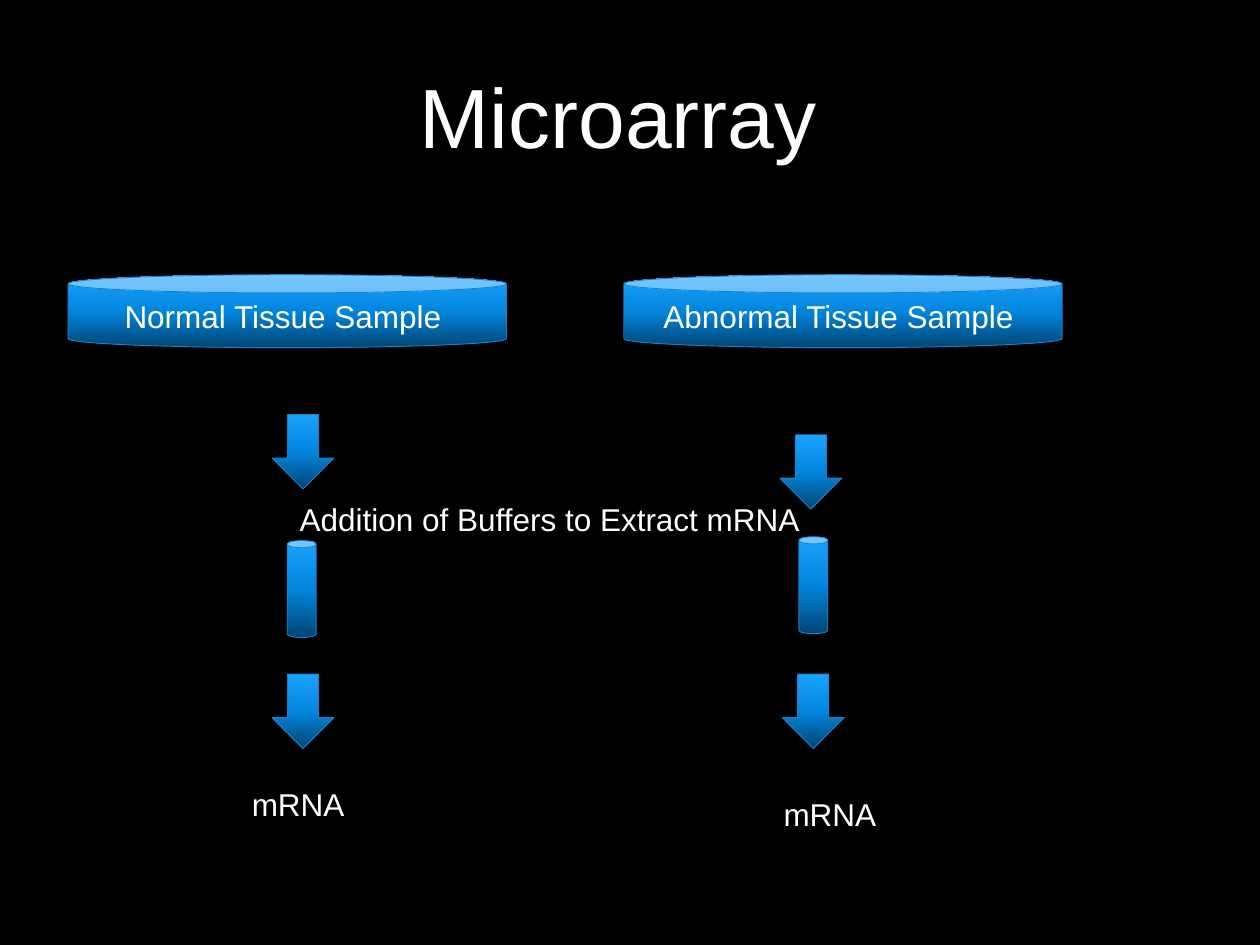
from copy import deepcopy

from pptx import Presentation
from pptx import util as u
from pptx.dml import color
from pptx.enum import shapes, text

CAN = shapes.MSO_SHAPE.CAN
ARROW = shapes.MSO_SHAPE.DOWN_ARROW


def rgb(value):
    return color.RGBColor.from_string(value)


class Diagram:
    font = "Arial"
    ink = "FFFFFF"
    background = "000000"
    edge = "1884CD"
    stops = [(0, "014573"), (0.5, "0285DD"), (1, "1AA3FF")]

    def __init__(self, prs):
        self.s = prs.slides.add_slide(prs.slide_layouts[5])
        fill = self.s.background.fill
        fill.solid()
        fill.fore_color.rgb = rgb(self.background)

    def add_words(self, sp, words, size, align, **frame):
        tf = sp.text_frame
        for name, value in frame.items():
            setattr(tf, name, value)
        p = tf.paragraphs[0]
        p.alignment = align
        r = p.add_run()
        r.text = words
        for name, value in {"name": self.font, "size": u.Pt(size)}.items():
            setattr(r.font, name, value)
        r.font.color.rgb = rgb(self.ink)

    def title(self, words, *box):
        sp = self.s.shapes.title
        for name, value in zip(("left", "top", "width", "height"), box):
            setattr(sp, name, u.Inches(value))
        self.add_words(sp, words, 48, text.PP_ALIGN.CENTER, word_wrap=True,
                       vertical_anchor=text.MSO_ANCHOR.MIDDLE)

    def shape(self, kind, *box, words=None):
        sp = self.s.shapes.add_shape(kind, *map(u.Inches, box))
        sp.shadow.inherit = False
        sp.line.color.rgb = rgb(self.edge)
        sp.line.width = u.Pt(0.5)
        sp.fill.gradient()
        sp.fill.gradient_angle = 90
        first = sp._element.spPr.find(".//{*}gs")
        first.addnext(deepcopy(first))
        for stop, (position, value) in zip(sp.fill.gradient_stops, self.stops):
            stop.position = position
            stop.color.rgb = rgb(value)
        if words:
            self.add_words(sp, words, 18, text.PP_ALIGN.CENTER,
                           vertical_anchor=text.MSO_ANCHOR.MIDDLE)

    def label(self, words, *box):
        sp = self.s.shapes.add_textbox(*map(u.Inches, box))
        self.add_words(sp, words, 18, text.PP_ALIGN.LEFT, word_wrap=False,
                       auto_size=text.MSO_AUTO_SIZE.SHAPE_TO_FIT_TEXT)


def main():
    prs = Presentation()
    prs.slide_width, prs.slide_height = u.Inches(10), u.Inches(7.5)
    d = Diagram(prs)
    d.title("Microarray ", 0.75, 0.13, 8.5, 1.56)
    for x, words in ((0.54, "Normal Tissue Sample "), (4.95, "Abnormal Tissue Sample ")):
        d.shape(CAN, x, 2.18, 3.48, 0.58, words=words)
    for x, y in ((2.28, 4.29), (6.34, 4.26)):
        d.shape(CAN, x, y, 0.23, 0.77)
    for x, y in ((1.9, 6.18), (6.12, 6.26)):
        d.label("mRNA", x, y, 0.99, 0.4)
    for x, y in ((2.16, 3.29), (2.16, 5.35), (6.19, 3.45), (6.21, 5.35)):
        d.shape(ARROW, x, y, 0.49, 0.59)
    d.label("Addition of Buffers to Extract mRNA", 2.28, 3.92, 4.26, 0.4)
    prs.save("out.pptx")


if __name__ == "__main__":
    main()
